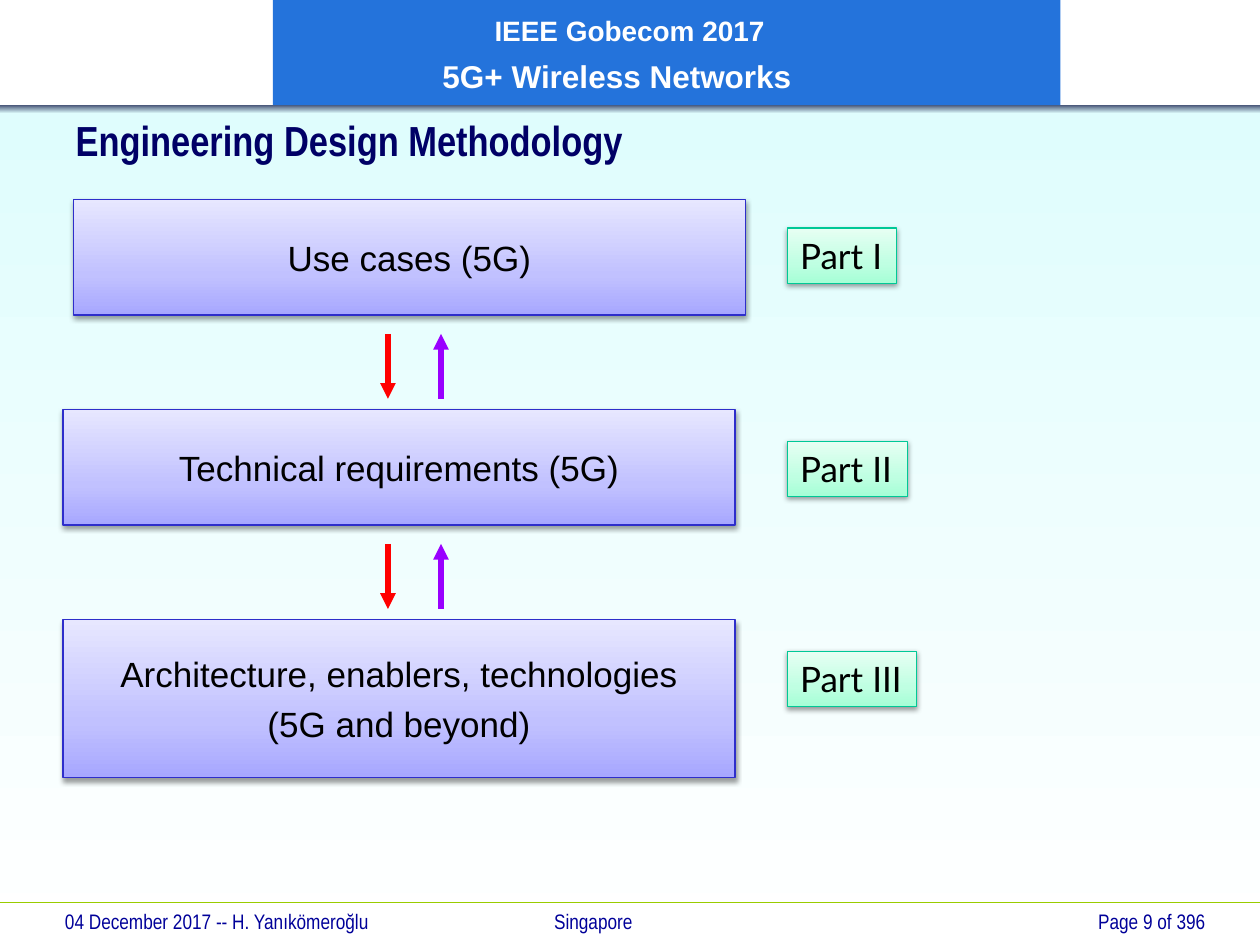
from pptx import Presentation
from pptx.util import Cm, Pt
from pptx.dml.color import RGBColor
from pptx.enum.shapes import MSO_SHAPE as Geo, MSO_CONNECTOR as Link
from pptx.enum.text import PP_ALIGN as Align, MSO_ANCHOR as Anchor, MSO_AUTO_SIZE as Auto
from pptx.oxml.ns import qn
from lxml.etree import SubElement as Sub

HUES = {
    "white": "FFFFFF", "black": "000000", "sky": "DFFDFD", "slate": "475577",
    "band": "2473DB", "rule": "99CC00", "foot": "000099", "title": "000066",
    "down": "FF0000", "up": "9900FF", "box": "2E2ECB", "part": "00C896",
}
FADES = {
    "page": [(0, HUES["sky"]), (100, HUES["white"])],
    "edge": [(0, HUES["slate"]), (100, HUES["sky"])],
    "box": [(0, "A7A7FF"), (35, "C1C1FF"), (100, "E7E7FF")],
    "part": [(0, "A5FFD6"), (35, "BFFFE2"), (100, "E7FFF3")],
}
TITLE = "Engineering Design Methodology"
HEAD = [("IEEE Gobecom 2017", 16, 4.22), ("5G+ Wireless Networks", 18, 3.17)]
FOOT = "04 December 2017 -- H. Yanıkömeroğlu\tSingapore"
PAGE = "Page 9 of 396"
STEPS = [
    (["Use cases (5G)"], 1.48, 2.33, "Part I", 2.2, 0.58),
    (["Technical requirements (5G)"], 1.27, 2.33, "Part II", 2.42, 0.64),
    (["Architecture, enablers, technologies", "(5G and beyond)"],
     1.27, 3.18, "Part III", 2.6, 0.64),
]
TOP, STEP = 4.02, 4.235
ARROWS = [(7.82, "down"), (8.89, "up")]
ARROW_TOP, ARROW_LEN = 6.73, 1.31


def rgb(name):
    return RGBColor.from_string(HUES[name])


def write(frame, lines, size=12, font="Arial", hue="black", bold=False,
          align=Align.LEFT, anchor=Anchor.TOP, wrap=True, auto=Auto.NONE, gap=0):
    frame.word_wrap = wrap
    frame.auto_size = auto
    frame.vertical_anchor = anchor
    for i, line in enumerate(lines):
        para = frame.paragraphs[0] if i == 0 else frame.add_paragraph()
        para.text = line
        para.alignment = align
        para.space_before = Pt(gap if i else 0)
        for run in para.runs:
            run.font.size = Pt(size)
            run.font.name = font
            run.font.bold = bold
            run.font.color.rgb = rgb(hue)
    return frame


def block(slide, at, fade=None, angle=90, fill=None, line=None):
    shape = slide.shapes.add_shape(Geo.RECTANGLE, *map(Cm, at))
    shape.shadow.inherit = False
    if fade:
        shape.fill.gradient()
        shape.fill.gradient_angle = angle
        stops = shape._element.spPr.find(".//" + qn("a:gsLst"))
        stops.clear()
        for place, code in FADES[fade]:
            stop = Sub(stops, qn("a:gs"), pos=str(place * 1000))
            Sub(stop, qn("a:srgbClr"), val=code)
    else:
        shape.fill.solid()
        shape.fill.fore_color.rgb = rgb(fill)
    if line:
        shape.line.color.rgb = rgb(line)
        shape.line.width = Pt(0.75)
    else:
        shape.line.fill.background()
    return shape


def card(slide, at, kind):
    shape = block(slide, at, fade=kind, line=kind)
    glow = shape._element.spPr.find(qn("a:effectLst"))
    shade = Sub(glow, qn("a:outerShdw"), blurRad=str(Pt(3.1)), dist=str(Pt(1.6)),
                dir="5400000", rotWithShape="0")
    tint = Sub(shade, qn("a:srgbClr"), val=HUES["black"])
    Sub(tint, qn("a:alpha"), val="38000")
    return shape


def stroke(slide, ends, hue, width, tip=False):
    line = slide.shapes.add_connector(Link.STRAIGHT, *map(Cm, ends))
    line.line.color.rgb = rgb(hue)
    line.line.width = Pt(width)
    if tip:
        Sub(line.line._get_or_add_ln(), qn("a:tailEnd"), type="triangle")
    Sub(line._element.spPr, qn("a:effectLst"))


def frame_page(slide):
    block(slide, (0, 2.18, 25.4, 16.87), fade="page", angle=270)
    stroke(slide, (0, 18.2, 25.4, 18.2), "rule", 0.75)
    left = slide.shapes.add_textbox(Cm(1.06), Cm(18.2), Cm(15.88), Cm(0.84))
    write(left.text_frame, [FOOT], font="Arial Narrow", hue="foot")
    tabs = Sub(left.text_frame.paragraphs[0]._p.get_or_add_pPr(), qn("a:tabLst"))
    Sub(tabs, qn("a:tab"), pos=str(Cm(9.86)), algn="l")
    right = slide.shapes.add_textbox(Cm(19.05), Cm(18.2), Cm(5.5), Cm(0.64))
    write(right.text_frame, [PAGE], font="Arial Narrow", hue="foot", align=Align.RIGHT)
    block(slide, (0, 2.12, 25.4, 0.17), fade="edge", angle=270)
    band = block(slide, (5.5, 0, 15.88, 2.12), fill="band")
    write(band.text_frame, [text for text, _, _ in HEAD], hue="white",
          bold=True, anchor=Anchor.MIDDLE, gap=3.6)
    for para, (_, size, inset) in zip(band.text_frame.paragraphs, HEAD):
        para.line_spacing = 1.1
        para.runs[0].font.size = Pt(size)
        para._p.get_or_add_pPr().set("marL", str(Cm(inset)))


def add_title(slide):
    title = slide.shapes.title
    title._element.getparent().append(title._element)
    title.left, title.top, title.width, title.height = map(Cm, (1.27, 2.29, 17.58, 1.07))
    write(title.text_frame, [TITLE], size=24, font="Arial Narrow", hue="title",
          bold=True, anchor=Anchor.MIDDLE)


def add_steps(slide):
    for i, (lines, left, tall, part, wide, drop) in enumerate(STEPS):
        top = TOP + i * STEP
        box = card(slide, (left, top, 13.55, tall), "box")
        write(box.text_frame, lines, size=20, align=Align.CENTER,
              anchor=Anchor.MIDDLE, gap=5)
        tag = card(slide, (15.88, top + drop, wide, 1.11), "part")
        write(tag.text_frame, [part], size=20, font="Lato", wrap=False,
              auto=Auto.SHAPE_TO_FIT_TEXT)
    for i in range(len(STEPS) - 1):
        high = ARROW_TOP + i * STEP
        low = high + ARROW_LEN
        for x, way in ARROWS:
            start, end = (high, low) if way == "down" else (low, high)
            stroke(slide, (x, start, x, end), way, 3, tip=True)


def main():
    deck = Presentation()
    deck.slide_width, deck.slide_height = Cm(25.4), Cm(19.05)
    slide = deck.slides.add_slide(deck.slide_layouts[5])
    frame_page(slide)
    add_title(slide)
    add_steps(slide)
    deck.save("out.pptx")


if __name__ == "__main__":
    main()
